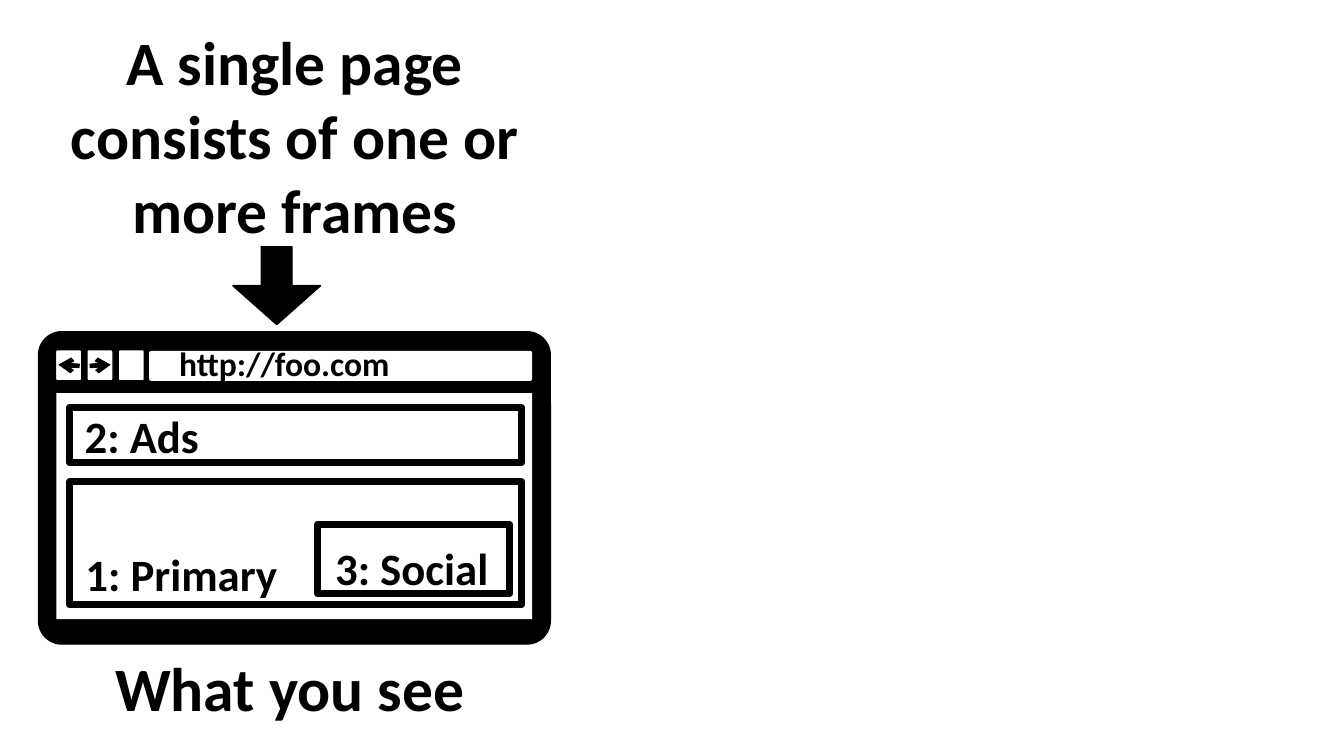
from lxml.etree import SubElement
from pptx import Presentation
from pptx.dml.color import RGBColor
from pptx.enum.shapes import MSO_CONNECTOR, MSO_SHAPE
from pptx.enum.text import MSO_ANCHOR, PP_ALIGN
from pptx.oxml.ns import qn
from pptx.util import Cm, Pt

COLORS = {"ink": "000000", "paper": "FFFFFF"}
CORNER = 0.075


def add_box(shapes, kind, bounds, fill, line_width=0, adjustments=()):
    shape = shapes.add_shape(kind, *[Cm(value) for value in bounds])
    shape.shadow.inherit = False
    for index, value in enumerate(adjustments):
        shape.adjustments[index] = value
    shape.fill.solid()
    shape.fill.fore_color.rgb = RGBColor.from_string(COLORS[fill])
    if line_width:
        shape.line.color.rgb = RGBColor.from_string(COLORS["ink"])
        shape.line.width = Pt(line_width)
    else:
        shape.line.fill.background()


def add_label(shapes, text, bounds, size, anchor=MSO_ANCHOR.MIDDLE, spacing=0.9):
    frame = shapes.add_textbox(*[Cm(value) for value in bounds]).text_frame
    frame.word_wrap = True
    frame.vertical_anchor = anchor
    paragraph = frame.paragraphs[0]
    paragraph.alignment = PP_ALIGN.CENTER
    paragraph.line_spacing = spacing
    run = paragraph.add_run()
    run.text = text
    run.font.name = "Calibri"
    run.font.size = Pt(size)
    run.font.bold = True
    run.font.color.rgb = RGBColor.from_string(COLORS["ink"])


presentation = Presentation()
presentation.slide_width = Cm(33.87)
presentation.slide_height = Cm(19.05)
slide = presentation.slides.add_slide(presentation.slide_layouts[6])

add_label(slide.shapes, "A single page consists of one or more frames",
          (0.69, 0.48, 13.49, 5.89), 44, MSO_ANCHOR.TOP, 1.0)

browser = slide.shapes.add_group_shape().shapes
add_box(browser, MSO_SHAPE.ROUNDED_RECTANGLE, (0.97, 8.36, 12.9, 7.87), "ink", 1, [CORNER])
add_box(browser, MSO_SHAPE.RECTANGLE, (1.42, 9.91, 11.99, 5.69), "paper")
add_box(browser, MSO_SHAPE.ROUNDED_RECTANGLE, (3.76, 8.84, 9.65, 0.76), "paper", 0, [CORNER])
for button in range(3):
    add_box(browser, MSO_SHAPE.ROUNDED_RECTANGLE,
            (1.4 + 0.79 * button, 8.81, 0.66, 0.79), "paper", 1, [CORNER])

for start, end in [(2.01, 1.47), (2.26, 2.79)]:
    arrow = browser.add_connector(MSO_CONNECTOR.STRAIGHT, Cm(start), Cm(9.22), Cm(end), Cm(9.19))
    arrow.line.color.rgb = RGBColor.from_string(COLORS["ink"])
    arrow.line.width = Pt(3.25)
    properties = arrow._element.spPr
    SubElement(properties.find(qn("a:ln")), qn("a:tailEnd"), type="arrow")
    SubElement(properties, qn("a:effectLst"))

add_label(browser, "http://foo.com", (3.61, 8.81, 7.11, 0.79), 24)

for frame_bounds in [
    (1.75, 10.26, 11.4, 1.4),
    (1.75, 12.14, 11.4, 3.1),
    (8, 13.21, 4.85, 1.75),
]:
    add_box(browser, MSO_SHAPE.RECTANGLE, frame_bounds, "paper", 5)

add_label(browser, "What you see", (0.56, 16.26, 13.49, 2.13), 44, MSO_ANCHOR.TOP, 1.0)

for text, bounds in [
    ("2: Ads", (0.91, 10.62, 5.33, 0.86)),
    ("1: Primary", (1.3, 14.25, 6.55, 0.56)),
    ("3: Social", (7.75, 13.84, 5.26, 1.09)),
]:
    add_label(slide.shapes, text, bounds, 32)

add_box(slide.shapes, MSO_SHAPE.DOWN_ARROW, (5.87, 6.22, 2.21, 1.96), "ink", 1, [0.35, 0.5])

presentation.save("out.pptx")
